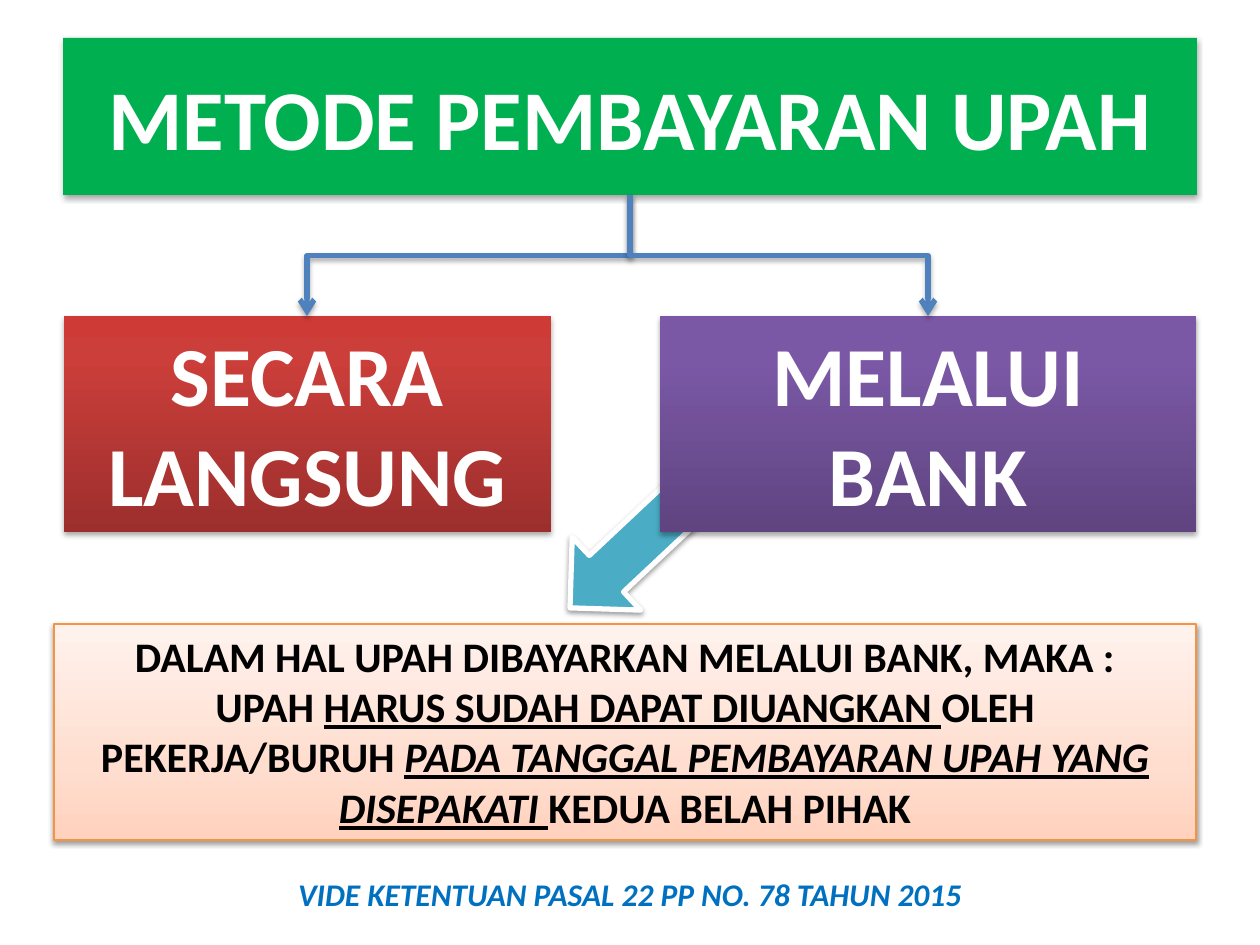
"""Build a slide on wage payment methods as a small flow chart."""
from copy import deepcopy

from lxml.etree import SubElement
from pptx import Presentation
from pptx.dml.color import RGBColor
from pptx.enum.shapes import MSO_CONNECTOR as Connector, MSO_SHAPE as Shape
from pptx.enum.text import MSO_ANCHOR as Anchor, MSO_AUTO_SIZE as AutoSize, PP_ALIGN as Align
from pptx.oxml.ns import qn
from pptx.util import Pt

PX = 914400 / 126
COLORS = {
    "white": "FFFFFF", "black": "000000", "green": "00B050", "teal": "4BACC6",
    "blue": "4F81BD", "source": "0070C0", "orange": "F69240",
}
GRADIENTS = {
    "red": [(0, "9C2F2D"), (80, "CB3E3A"), (100, "CE3B37")],
    "purple": [(0, "5F4480"), (80, "7B58A6"), (100, "7C57A8")],
    "peach": [(0, "FFD2BD"), (35, "FFDED0"), (100, "FFF2ED")],
}


def add_shadow(shape, distance, opacity):
    effects = SubElement(shape._element.spPr, qn("a:effectLst"))
    shadow = SubElement(effects, qn("a:outerShdw"), blurRad="40000", dist=str(distance),
                        dir="5400000", rotWithShape="0")
    color = SubElement(shadow, qn("a:srgbClr"), val=COLORS["black"])
    SubElement(color, qn("a:alpha"), val=str(opacity * 1000))


def write(shape, paragraphs, size, color, anchor=Anchor.TOP, fit=AutoSize.SHAPE_TO_FIT_TEXT):
    frame = shape.text_frame
    frame.word_wrap = True
    frame.auto_size = fit
    frame.vertical_anchor = anchor
    for index, runs in enumerate(paragraphs):
        para = frame.add_paragraph() if index else frame.paragraphs[0]
        para.alignment = Align.CENTER
        para.font.name = "Calibri"
        para.font.size = Pt(size)
        para.font.bold = True
        para.font.color.rgb = RGBColor.from_string(COLORS[color])
        for text, style in runs:
            span = para.add_run()
            span.text = text
            if "u" in style:
                span.font.underline = True
            if "i" in style:
                span.font.italic = True


deck = Presentation()
deck.slide_width, deck.slide_height = int(1260 * PX), int(945 * PX)
slide = deck.slides.add_slide(deck.slide_layouts[5])
shapes = slide.shapes

arrow = shapes.add_shape(Shape.DOWN_ARROW, *[int(n * PX) for n in (578, 474, 100, 159)])
arrow.rotation = 46.8
arrow.fill.solid()
arrow.fill.fore_color.rgb = RGBColor.from_string(COLORS["teal"])
arrow.line.color.rgb = RGBColor.from_string(COLORS["white"])
arrow.line.width = Pt(3)
add_shadow(arrow, 20000, 38)

title = shapes.title
title.left, title.top, title.width, title.height = [int(n * PX) for n in (63, 38, 1134, 157)]
title.fill.solid()
title.fill.fore_color.rgb = RGBColor.from_string(COLORS["green"])
title.line.fill.background()
add_shadow(title, 23000, 35)
write(title, [[("METODE PEMBAYARAN UPAH", "")]], 48.6, "white", Anchor.MIDDLE, AutoSize.NONE)

rule = [
    [("DALAM HAL UPAH DIBAYARKAN MELALUI BANK, MAKA :", "")],
    [("UPAH ", ""), ("HARUS SUDAH DAPAT DIUANGKAN ", "u"), ("OLEH PEKERJA/BURUH ", ""),
     ("PADA TANGGAL PEMBAYARAN UPAH YANG DISEPAKATI ", "iu"), ("KEDUA BELAH PIHAK", "")],
]
boxes = [
    ((64, 316, 487, 216), "red", None, [[("SECARA LANGSUNG", "")]], 48, "white"),
    ((660, 316, 536, 216), "purple", None, [[("MELALUI BANK", "")]], 48, "white"),
    ((54, 624, 1142, 216), "peach", "orange", rule, 24, "black"),
]
for place, gradient, outline, paragraphs, size, color in boxes:
    box = shapes.add_shape(Shape.RECTANGLE, *[int(n * PX) for n in place])
    box.fill.gradient()
    box.fill.gradient_angle = 90
    stop_list = box._element.spPr.find(".//" + qn("a:gsLst"))
    stop_list.append(deepcopy(stop_list[0]))
    for stop, (position, shade) in zip(box.fill.gradient_stops, GRADIENTS[gradient]):
        stop.position = position / 100
        stop.color.rgb = RGBColor.from_string(shade)
    if outline:
        box.line.color.rgb = RGBColor.from_string(COLORS[outline])
        box.line.width = Pt(0.75)
        add_shadow(box, 20000, 38)
    else:
        box.line.fill.background()
        add_shadow(box, 23000, 35)
    write(box, paragraphs, size, color)

start_x, start_y, end_y = 630, 195, 316
middle_y = (start_y + end_y) / 2
half_drop = (end_y - start_y) / 2
for end_x, side, turn in ((307, 1, 90), (928, -1, 270)):
    middle_x = (start_x + end_x) / 2
    half_span = abs(end_x - start_x) / 2
    corners = (middle_x - side * half_drop, middle_y - half_span,
               middle_x + side * half_drop, middle_y + half_span)
    branch = shapes.add_connector(Connector.ELBOW, *[int(n * PX) for n in corners])
    branch._element.spPr.xfrm.set("rot", str(turn * 60000))
    branch.line.color.rgb = RGBColor.from_string(COLORS["blue"])
    branch.line.width = Pt(3)
    SubElement(branch.line._get_or_add_ln(), qn("a:tailEnd"), type="arrow")
    add_shadow(branch, 23000, 35)

source = shapes.add_textbox(*[int(n * PX) for n in (74, 869, 1112, 51)])
write(source, [[("VIDE KETENTUAN PASAL 22 PP NO. 78 TAHUN 2015", "i")]], 18, "source")

deck.save("out.pptx")
